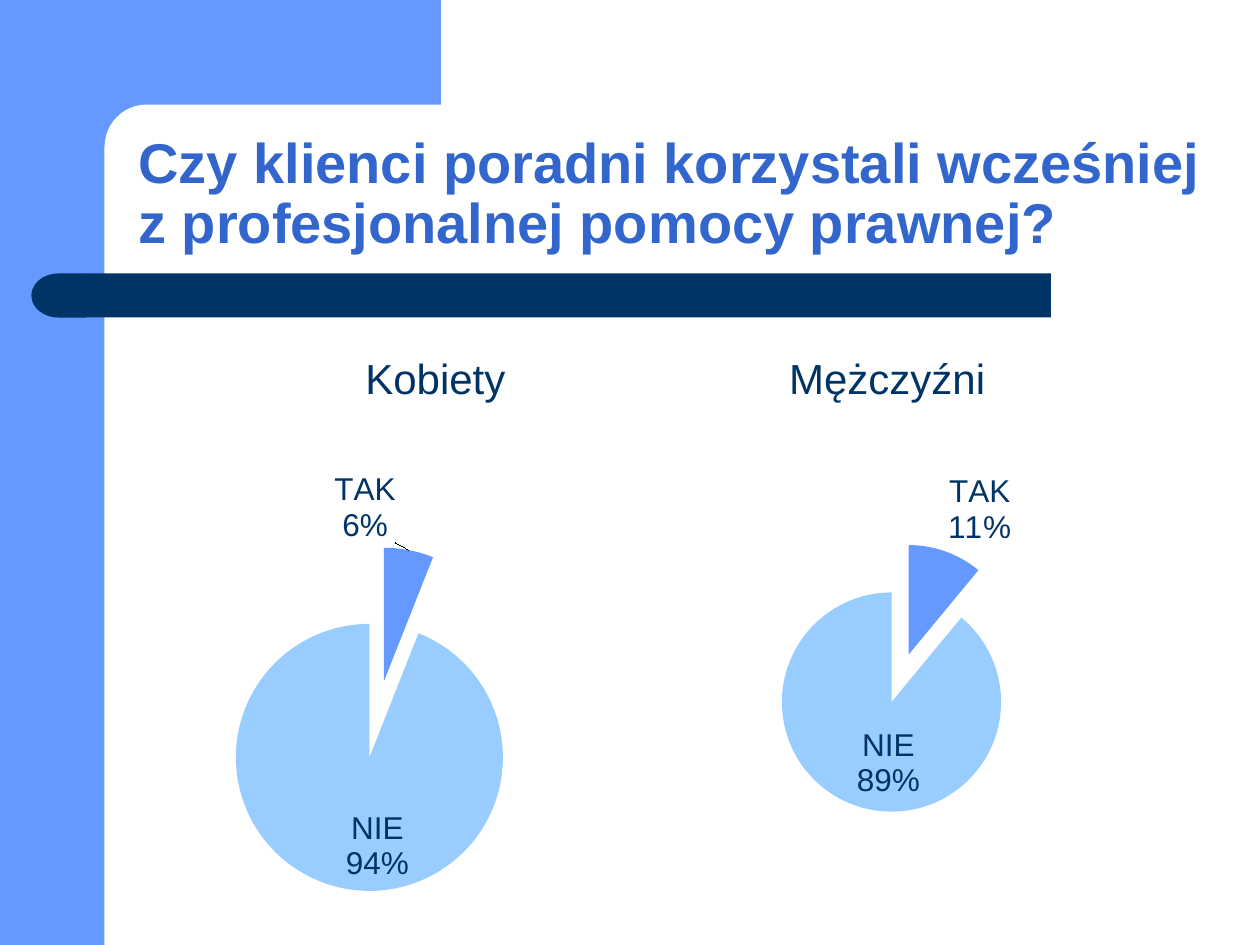
from lxml import etree
from pptx import Presentation
from pptx import util as u
from pptx.chart.data import CategoryChartData
from pptx.dml.color import RGBColor
from pptx.enum import chart as ch, shapes, text
from pptx.oxml.ns import qn

COLORS = {"blue": "6699FF", "pale": "99CCFF", "navy": "003366",
          "title": "3366CC", "white": "FFFFFF"}
FONT = "Arial"
SHAPE = shapes.MSO_SHAPE
SHOWN = {"showVal": "0", "showCatName": "1", "showPercent": "1"}


def rgb(name):
    return RGBColor.from_string(COLORS[name])


def inches(box):
    return [u.Inches(length) for length in box]


def style_font(font, size, color, bold=False):
    values = {"name": FONT, "size": u.Pt(size), "bold": bold}
    for key, value in values.items():
        setattr(font, key, value)
    font.color.rgb = rgb(color)


def add_block(slide, kind, box, color):
    block = slide.shapes.add_shape(kind, *inches(box))
    block.shadow.inherit = False
    block.fill.solid()
    block.fill.fore_color.rgb = rgb(color)
    block.line.fill.background()
    return block


def add_backdrop(slide, width, height):
    """Blue corner with a rounded white page cut into it."""
    side, top = 0.83, 0.83
    add_block(slide, SHAPE.RECTANGLE, (0, 0, side, height), "blue")
    add_block(slide, SHAPE.RECTANGLE, (0.75, 0, 2.75, 1.17), "blue")
    page = add_block(slide, SHAPE.ROUNDED_RECTANGLE, (side, top, 5.58, 0.67), "white")
    page.adjustments[0] = 0.5


def add_divider(slide, left, top, width, height):
    cap = 0.43
    add_block(slide, SHAPE.RECTANGLE,
              (left + cap - 0.01, top, width - cap + 0.01, height), "navy")
    end = add_block(slide, SHAPE.FLOWCHART_DELAY, (left, top, cap, height), "navy")
    end._element.spPr.find(qn("a:xfrm")).set("flipH", "1")


def add_text(slide, box, wording, frame_format, paragraph_format, font_format):
    frame = slide.shapes.add_textbox(*inches(box)).text_frame
    for key, value in {"word_wrap": True, **frame_format}.items():
        setattr(frame, key, value)
    paragraph = frame.paragraphs[0]
    for key, value in paragraph_format.items():
        setattr(paragraph, key, value)
    run = paragraph.add_run()
    run.text = wording
    style_font(run.font, *font_format)


def add_title(slide, box, wording):
    add_text(slide, box, wording, {"vertical_anchor": text.MSO_ANCHOR.BOTTOM},
             {"line_spacing": 0.9}, (32, "title", True))


def add_heading(slide, box, wording):
    add_text(slide, box, wording, {"auto_size": text.MSO_AUTO_SIZE.SHAPE_TO_FIT_TEXT},
             {"alignment": text.PP_ALIGN.CENTER}, (24, "navy"))


def manual_layout(values):
    layout = etree.Element(qn("c:layout"))
    manual = etree.SubElement(layout, qn("c:manualLayout"))
    for tag, value in values.items():
        etree.SubElement(manual, qn(f"c:{tag}")).set("val", str(value))
    return layout


def circle_layout(box, center, radius):
    """Square plot area around an unexploded pie, as fractions of the chart box."""
    width, height = box[2:]
    fractions = {"x": (center[0] - radius) / width, "y": (center[1] - radius) / height,
                 "w": 2 * radius / width, "h": 2 * radius / height}
    return manual_layout({"layoutTarget": "inner", "xMode": "edge", "yMode": "edge",
                          **fractions})


def style_slice(point, index, color, explosion, position, label_shift):
    point.format.fill.solid()
    point.format.fill.fore_color.rgb = rgb(color)
    point.format.line.fill.background()
    label = point.data_label
    style_font(label.font, 18, "navy")
    label.position = position

    series = point._element
    slice_xml = series.findall(qn("c:dPt"))[index]
    exploded = etree.Element(qn("c:explosion"))
    exploded.set("val", str(explosion))
    slice_xml.find(qn("c:spPr")).addprevious(exploded)

    label_xml = series.find(qn("c:dLbls")).findall(qn("c:dLbl"))[index]
    for tag, value in SHOWN.items():
        label_xml.find(qn(f"c:{tag}")).set("val", value)
    etree.SubElement(label_xml, qn("c:separator")).text = "\n"
    if label_shift:
        shift = manual_layout({"x": label_shift, "y": 0})
        label_xml.find(qn("c:idx")).addnext(shift)


def add_pie(slide, box, shares, explosions, center, radius, yes_shift):
    answers = CategoryChartData()
    answers.categories = ["TAK", "NIE"]
    answers.add_series("Series 1", shares)
    chart = slide.shapes.add_chart(ch.XL_CHART_TYPE.PIE, *inches(box), answers).chart
    chart.has_title = False
    chart.has_legend = False
    style_font(chart.font, 18, "navy")
    plot = chart.plots[0]
    plot.vary_by_categories = True

    area = chart._chartSpace.chart.plotArea
    for layout in area.findall(qn("c:layout")):
        area.remove(layout)
    area.insert(0, circle_layout(box, center, radius))

    places = ch.XL_LABEL_POSITION
    slices = zip(("blue", "pale"), explosions,
                 (places.OUTSIDE_END, places.INSIDE_END), (yes_shift, 0))
    for index, look in enumerate(slices):
        style_slice(plot.series[0].points[index], index, *look)


def main():
    width, height = 10, 7.5
    deck = Presentation()
    deck.slide_width, deck.slide_height = inches((width, height))
    slide = deck.slides.add_slide(deck.slide_layouts[6])

    add_backdrop(slide, width, height)
    add_divider(slide, 0.25, 2.17, 8.09, 0.35)
    add_title(slide, (1, 0.83, 8.75, 1.25),
              "Czy klienci poradni korzystali wcześniej z profesjonalnej pomocy prawnej?")
    add_heading(slide, (1.83, 2.75, 3.25, 0.5), "Kobiety")
    add_heading(slide, (5.58, 2.75, 2.92, 0.5), "Mężczyźni")
    add_pie(slide, (0.98, 3.59, 4.02, 3.62), (6, 94), (29, 29),
            (2.01, 2.12), 1.06, -0.15)
    add_pie(slide, (5.08, 3.59, 4.1, 3.62), (11, 89), (31, 15),
            (2.04, 1.86), 0.87, 0)
    deck.save("out.pptx")


if __name__ == "__main__":
    main()
